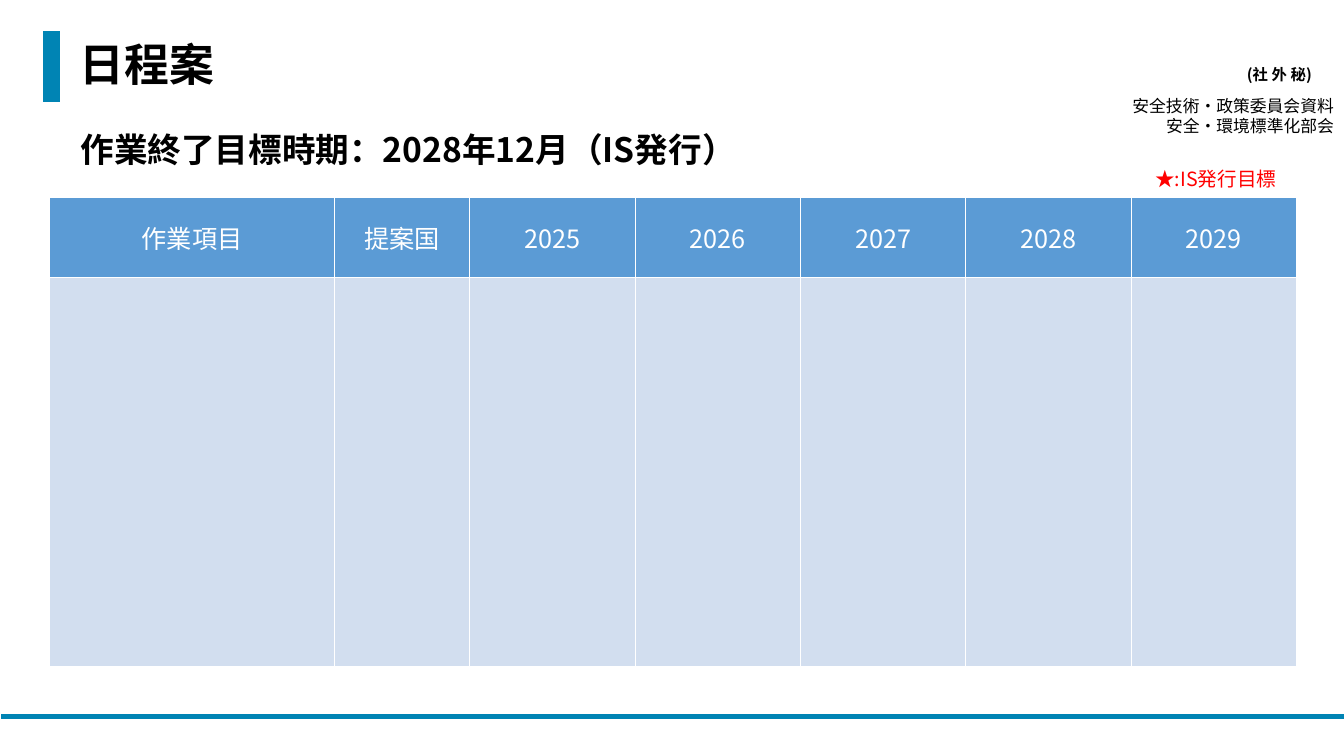
from lxml import etree
from pptx import Presentation
from pptx.dml.color import RGBColor
from pptx.enum.shapes import MSO_SHAPE
from pptx.enum.text import MSO_ANCHOR, PP_ALIGN
from pptx.oxml.ns import qn
from pptx.util import Inches, Pt

MINUS, RECTANGLE = MSO_SHAPE.MATH_MINUS, MSO_SHAPE.RECTANGLE
TOP, MIDDLE, BOTTOM = MSO_ANCHOR.TOP, MSO_ANCHOR.MIDDLE, MSO_ANCHOR.BOTTOM
LEFT, CENTER, RIGHT = PP_ALIGN.LEFT, PP_ALIGN.CENTER, PP_ALIGN.RIGHT

GOTHIC, LATO = "Noto Sans CJK JP", "Lato"
BLACK, WHITE, RED = "000000", "FFFFFF", "FF0000"
ACCENT, HEADER_BLUE, BODY_BLUE = "0084B4", "5B9BD5", "D2DEEF"

HEADINGS = ["作業項目", "提案国"] + [str(year) for year in range(2025, 2030)]
COLUMN_WIDTHS = [2.83, 1.34] + [1.64] * 5
ROW_HEIGHTS = [0.79, 3.86]


def color(hex_code):
    return RGBColor.from_string(hex_code)


def write(frame, lines, size, ink=BLACK, font=GOTHIC, bold=False,
          align=LEFT, spacing=None):
    """Fill a text frame with one paragraph per line."""
    for index, line in enumerate(lines):
        paragraph = frame.add_paragraph() if index else frame.paragraphs[0]
        paragraph.alignment = align
        if spacing:
            paragraph.line_spacing = spacing
        run = paragraph.add_run()
        run.text = line
        run.font.size = Pt(size)
        run.font.bold = bold
        run.font.name = font
        run.font.color.rgb = color(ink)
        east_asian = etree.SubElement(run.font._element, qn("a:ea"))
        east_asian.set("typeface", font)


def add_text(slide, box, lines, size, anchor=TOP, **style):
    frame = slide.shapes.add_textbox(*map(Inches, box)).text_frame
    frame.word_wrap = True
    frame.vertical_anchor = anchor
    write(frame, lines, size, **style)


def add_block(slide, kind, box, fill):
    block = slide.shapes.add_shape(kind, *map(Inches, box))
    block.shadow.inherit = False
    block.fill.solid()
    block.fill.fore_color.rgb = color(fill)
    block.line.fill.background()
    return block


def add_heading(slide, left, top):
    """Place the upright accent bar, title and target date."""
    bar = add_block(slide, MINUS, (left, top + 0.22, 0.97, 0.72), ACCENT)
    bar.rotation = 90
    add_text(slide, (left + 0.66, top, 9.42, 0.87), ["日程案"], 32,
             anchor=BOTTOM, bold=True, spacing=1.2)
    add_text(slide, (left + 0.67, top + 1.15, 12.02, 0.6),
             ["作業終了目標時期：2028年12月（IS発行）"], 24, bold=True)


def add_document_label(slide, right, top):
    """Place the confidentiality mark and committee names, flush right."""
    add_text(slide, (right - 1.72, top, 1.5, 0.47), ["(社 外 秘)"], 11,
             bold=True, align=RIGHT)
    add_text(slide, (right - 2.96, top + 0.3, 2.96, 0.5),
             ["安全技術・政策委員会資料", "安全・環境標準化部会"], 12,
             font=LATO, align=RIGHT)


def add_cell_borders(cell, hex_code, points):
    properties = cell._tc.get_or_add_tcPr()
    for index, side in enumerate(("lnL", "lnR", "lnT", "lnB")):
        border = etree.Element(qn("a:" + side), w=str(Pt(points)))
        fill = etree.SubElement(border, qn("a:solidFill"))
        etree.SubElement(fill, qn("a:srgbClr"), val=hex_code)
        properties.insert(index, border)


def add_schedule(slide, left, top):
    """Place the year table and the legend above its right end."""
    width, height = sum(COLUMN_WIDTHS), sum(ROW_HEIGHTS)
    schedule = slide.shapes.add_table(
        len(ROW_HEIGHTS), len(HEADINGS),
        *map(Inches, (left, top, width, height))).table
    for column, column_width in zip(schedule.columns, COLUMN_WIDTHS):
        column.width = Inches(column_width)
    for row, row_height, fill in zip(schedule.rows, ROW_HEIGHTS,
                                     (HEADER_BLUE, BODY_BLUE)):
        row.height = Inches(row_height)
        for cell in row.cells:
            cell.fill.solid()
            cell.fill.fore_color.rgb = color(fill)
            add_cell_borders(cell, WHITE, 1)
    for cell, heading in zip(schedule.rows[0].cells, HEADINGS):
        cell.vertical_anchor = MIDDLE
        write(cell.text_frame, [heading], 18, ink=WHITE, align=CENTER)

    legend = add_block(slide, RECTANGLE,
                       (left + width - 1.5, top - 0.36, 1.59, 0.34), WHITE)
    legend.text_frame.word_wrap = True
    legend.text_frame.vertical_anchor = MIDDLE
    write(legend.text_frame, ["★:IS発行目標"], 14, ink=RED)


def main():
    deck = Presentation()
    deck.slide_width, deck.slide_height = Inches(13.33), Inches(7.5)
    slide = deck.slides.add_slide(deck.slide_layouts[6])
    add_block(slide, MINUS, (-2.4, 7, 18.15, 0.22), ACCENT)
    add_document_label(slide, 13.33, 0.6)
    add_heading(slide, 0.03, 0.08)
    add_schedule(slide, 0.49, 1.96)
    deck.save("out.pptx")


if __name__ == "__main__":
    main()
